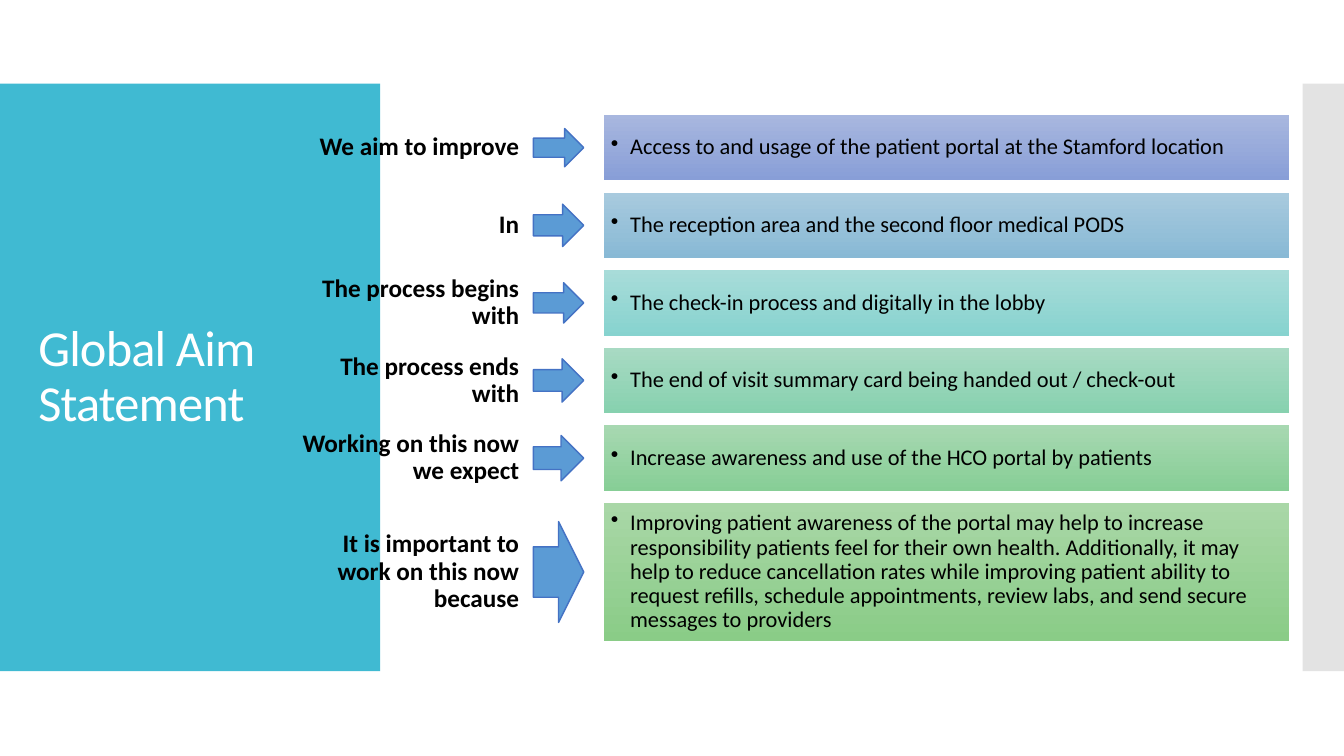
from dataclasses import dataclass

from pptx import Presentation
from pptx.dml.color import RGBColor
from pptx.enum.shapes import MSO_SHAPE
from pptx.enum.text import MSO_ANCHOR, MSO_AUTO_SIZE, PP_ALIGN
from pptx.oxml.ns import qn
from pptx.util import Inches, Pt
from lxml import etree

RECT, ARROW = MSO_SHAPE.RECTANGLE, MSO_SHAPE.RIGHT_ARROW
MIDDLE, NO_FIT = MSO_ANCHOR.MIDDLE, MSO_AUTO_SIZE.NONE
LEFT, RIGHT = PP_ALIGN.LEFT, PP_ALIGN.RIGHT


@dataclass(frozen=True)
class Theme:
    font: str = "Calibri"
    panel: str = "40BAD2"
    edge: str = "C8C8C8"
    arrow: str = "5B9BD5"
    arrow_line: str = "4472C4"
    text: str = "000000"
    title: str = "FFFFFF"
    title_size: int = 36
    label_size: int = 18
    detail_size: int = 16


theme = Theme()


def add_box(kind, x, y, w, h, color=None):
    """Add a shape without shadow or outline, solid when a color is given."""
    sp = slide.shapes.add_shape(kind, Inches(x), Inches(y), Inches(w), Inches(h))
    sp.shadow.inherit = False
    sp.line.fill.background()
    if color:
        sp.fill.solid()
        sp.fill.fore_color.rgb = RGBColor.from_string(color)
    return sp


def set_text(sp, text, size, color, align, insets, bold=False):
    """Write one vertically centred paragraph and return it."""
    tf = sp.text_frame
    tf.word_wrap = True
    tf.auto_size = NO_FIT
    tf.vertical_anchor = MIDDLE
    tf.margin_left = tf.margin_right = Inches(insets[0])
    tf.margin_top = tf.margin_bottom = Inches(insets[1])
    tf.text = text
    p = tf.paragraphs[0]
    p.alignment = align
    p.line_spacing = 0.9
    font = p.runs[0].font
    font.name, font.size, font.bold = theme.font, Pt(size), bold
    font.color.rgb = RGBColor.from_string(color)
    return p


prs = Presentation()
prs.slide_width, prs.slide_height = Inches(13.33), Inches(7.5)
slide = prs.slides.add_slide(prs.slide_layouts[5])

# Side panels, with the title above them
add_box(RECT, 0, 0.83, 3.77, 5.83, theme.panel)
edge = add_box(RECT, 12.92, 0.83, 0.41, 5.83, theme.edge)
edge_color = edge._element.spPr.find(qn("a:solidFill"))[0]
etree.SubElement(edge_color, qn("a:alpha"), val="50000")

title = slide.shapes.title
title.left, title.top = Inches(0.28), Inches(1.23)
title.width, title.height = Inches(3.22), Inches(5.03)
p = set_text(title, "Global Aim Statement", theme.title_size, theme.title, LEFT, (0.1, 0.05))
p.runs[0].font._element.set("spc", "-60")
slide.shapes._spTree.append(title._element)

# Label, detail, arrow height, gradient top and bottom
rows = [
    ("We aim to improve",
     "Access to and usage of the patient portal at the Stamford location",
     0.38, "A8B7DF", "889ED7"),
    ("In",
     "The reception area and the second floor medical PODS",
     0.42, "A8CADE", "88B9D5"),
    ("The process begins with",
     "The check-in process and digitally in the lobby",
     0.4, "A8DCD9", "87D3CF"),
    ("The process ends with",
     "The end of visit summary card being handed out / check-out",
     0.43, "A8DAC3", "87D1AF"),
    ("Working on this now we expect",
     "Increase awareness and use of the HCO portal by patients",
     0.45, "A7D8B1", "87CE96"),
    ("It is important to work on this now because",
     "Improving patient awareness of the portal may help to increase "
     "responsibility patients feel for their own health. Additionally, it may "
     "help to reduce cancellation rates while improving patient ability to "
     "request refills, schedule appointments, review labs, and send secure "
     "messages to providers",
     1, "A9D7A7", "8ACC87"),
]
ROW_H, LAST_H, GAP = 0.65, 1.37, 0.12
LABEL_H, LAST_LABEL_H = 0.65, 0.93

y = 1.14
for i, (label, detail, arrow_h, top_color, bottom_color) in enumerate(rows):
    last = i == len(rows) - 1
    h = LAST_H if last else ROW_H
    label_h = LAST_LABEL_H if last else LABEL_H
    middle = y + h / 2

    box = slide.shapes.add_textbox(Inches(2.79), Inches(middle - label_h / 2),
                                   Inches(2.5), Inches(label_h))
    set_text(box, label, theme.label_size, theme.text, RIGHT, (0.14, 0.05), bold=True)

    arrow = add_box(ARROW, 5.29, middle - arrow_h / 2, 0.5, arrow_h, theme.arrow)
    arrow.line.color.rgb = RGBColor.from_string(theme.arrow_line)
    arrow.line.width = Pt(1)

    bar = add_box(RECT, 5.99, y, 6.8, h)
    bar.fill.gradient()
    bar.fill.gradient_angle = 270
    for stop, color in zip(bar.fill.gradient_stops, (top_color, bottom_color)):
        stop.color.rgb = RGBColor.from_string(color)
    p = set_text(bar, detail, theme.detail_size, theme.text, LEFT, (0.07, 0.07))
    pPr = p._p.get_or_add_pPr()
    pPr.set("marL", str(Inches(0.19)))
    pPr.set("indent", str(-Inches(0.19)))
    etree.SubElement(pPr, qn("a:buChar"), char="•")

    y += h + GAP

prs.save("out.pptx")
